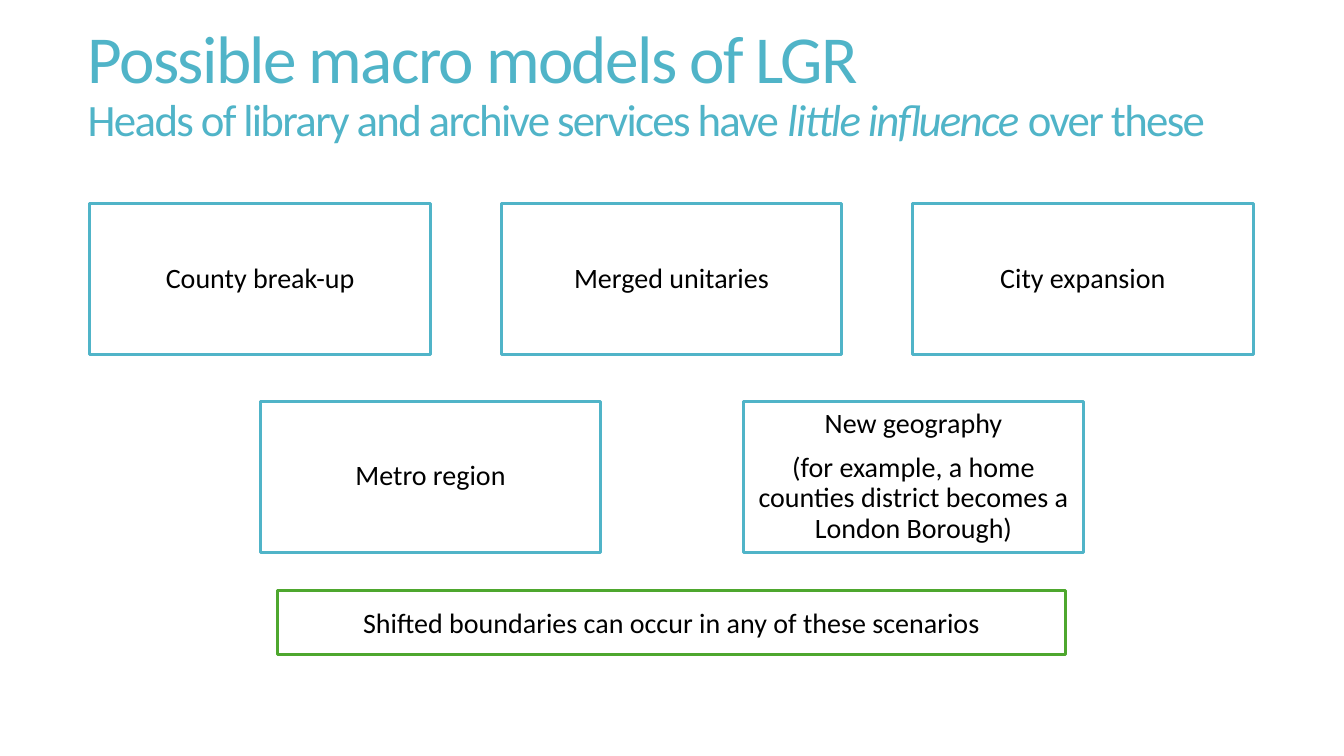
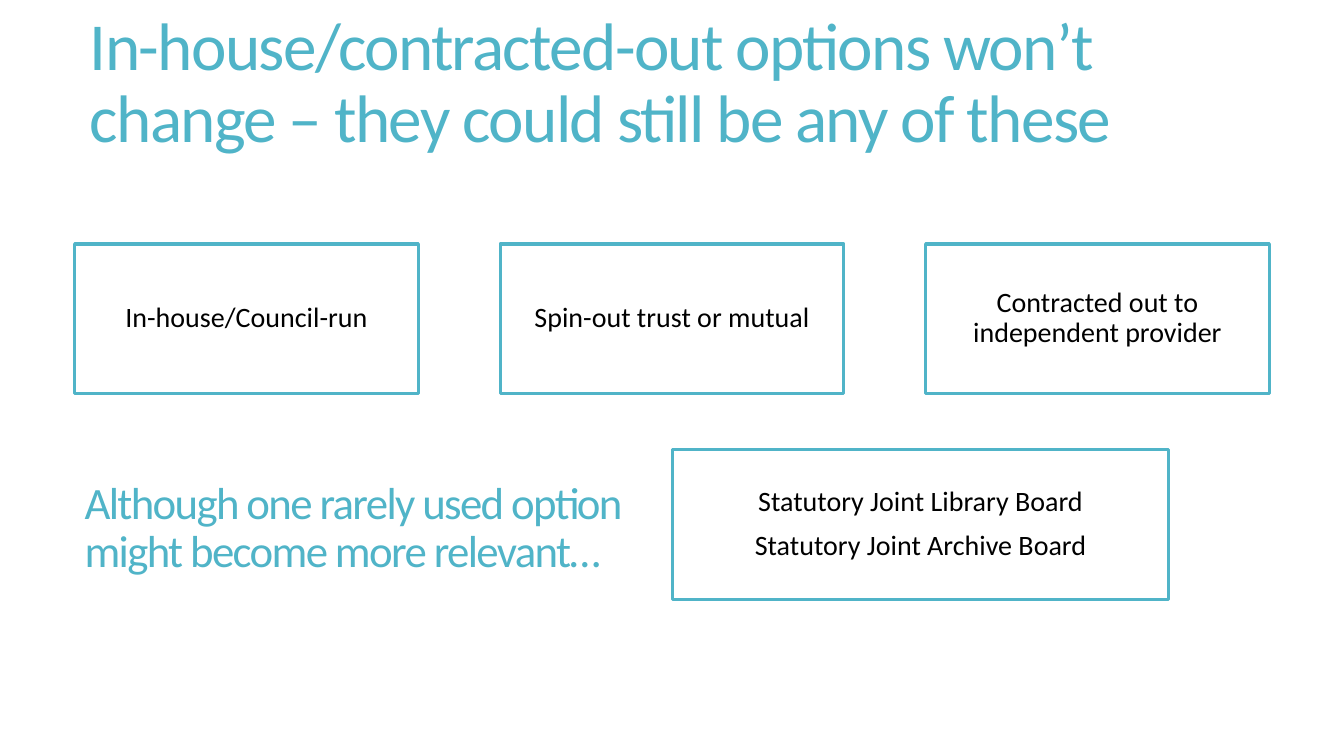
from pptx import Presentation
from pptx import util as u
from pptx.dml import color
from pptx.enum import shapes, text

EMU_PER_PX = 9144


def px(length):
    return u.Emu(length * EMU_PER_PX)


def rgb(value):
    return color.RGBColor.from_string(value)


class Slides:
    FONT = "Calibri"
    TEAL = "50B4C8"
    GREEN = "4EA72E"
    BLACK = "000000"
    TITLE_SIZE = 48
    SUBTITLE_SIZE = 32
    BOX_SIZE = 20

    def __init__(self):
        self.deck = Presentation()
        self.deck.slide_width = px(1333)
        self.deck.slide_height = px(750)
        self.page = None

    def new_page(self):
        layout = self.deck.slide_layouts.get_by_name("Title Only")
        self.page = self.deck.slides.add_slide(layout)

    def style(self, span, size, tint):
        span.font.name = self.FONT
        span.font.size = u.Pt(size)
        span.font.color.rgb = rgb(tint)

    def heading(self, shape, left, top, width, height, lines):
        shape.left, shape.top = px(left), px(top)
        shape.width, shape.height = px(width), px(height)
        frame = shape.text_frame
        frame.auto_size = text.MSO_AUTO_SIZE.NONE
        frame.word_wrap = True
        frame.vertical_anchor = text.MSO_ANCHOR.BOTTOM
        frame.text = "\n".join("".join(parts) for size, parts in lines)
        for para, (size, parts) in zip(frame.paragraphs, lines):
            para.alignment = text.PP_ALIGN.LEFT
            para.line_spacing = 0.9
            para.runs[0].text = parts[0]
            for part in parts[1:]:
                para.add_run().text = part
            for index, span in enumerate(para.runs):
                self.style(span, size, self.TEAL)
                span.font.italic = index % 2 == 1
                span._r.get_or_add_rPr().set("spc", "-120")

    def title(self, left, top, width, height, *lines):
        self.heading(self.page.shapes.title, left, top, width, height, lines)

    def note(self, left, top, width, height, words):
        shape = self.page.shapes.add_textbox(0, 0, px(width), px(height))
        self.heading(shape, left, top, width, height,
                     [(self.SUBTITLE_SIZE, [words])])

    def box(self, left, top, width, height, words, outline=TEAL, spacing=0.9):
        box = self.page.shapes.add_shape(
            shapes.MSO_SHAPE.RECTANGLE, px(left), px(top), px(width), px(height))
        box.shadow.inherit = False
        box.fill.background()
        box.line.color.rgb = rgb(outline)
        box.line.width = u.Pt(2.25)
        frame = box.text_frame
        frame.word_wrap = True
        frame.vertical_anchor = text.MSO_ANCHOR.MIDDLE
        frame.text = words
        for para in frame.paragraphs:
            para.alignment = text.PP_ALIGN.CENTER
            para.line_spacing = spacing
            para.space_before = u.Pt(10)
            for span in para.runs:
                self.style(span, self.BOX_SIZE, self.BLACK)

    def row(self, left, top, width, height, gap, labels):
        for index, label in enumerate(labels):
            self.box(left + index * (width + gap), top, width, height, label)


def macro_models(slides):
    slides.new_page()
    slides.title(
        77, 0, 1176, 150,
        (slides.TITLE_SIZE, ["Possible macro models of LGR"]),
        (slides.SUBTITLE_SIZE, ["Heads of library and archive services have ",
                                "little influence ", "over these"]))
    slides.row(89, 202, 338, 150, 70,
               ["County break-up", "Merged unitaries", "City expansion"])
    slides.row(258, 398, 338, 150, 141,
               ["Metro region",
                "New geography\n(for example, a home counties district "
                "becomes a London Borough)"])
    slides.box(275, 586, 782, 63,
               "Shifted boundaries can occur in any of these scenarios",
               slides.GREEN, 1.0)


def delivery_options(slides):
    slides.new_page()
    slides.title(
        79, 0, 1180, 161,
        (slides.TITLE_SIZE, ["In-house/contracted-out options won’t change – "
                             "they could still be any of these"]))
    slides.row(74, 242, 341, 148, 81,
               ["In-house/Council-run", "Spin-out trust or mutual",
                "Contracted out to independent provider"])
    slides.box(667, 446, 492, 149,
               "Statutory Joint Library Board\nStatutory Joint Archive Board")
    slides.note(74, 464, 617, 114,
                "Although one rarely used option might become more relevant…")


def main():
    slides = Slides()
    macro_models(slides)
    delivery_options(slides)
    slides.deck.save("out.pptx")


if __name__ == "__main__":
    main()
